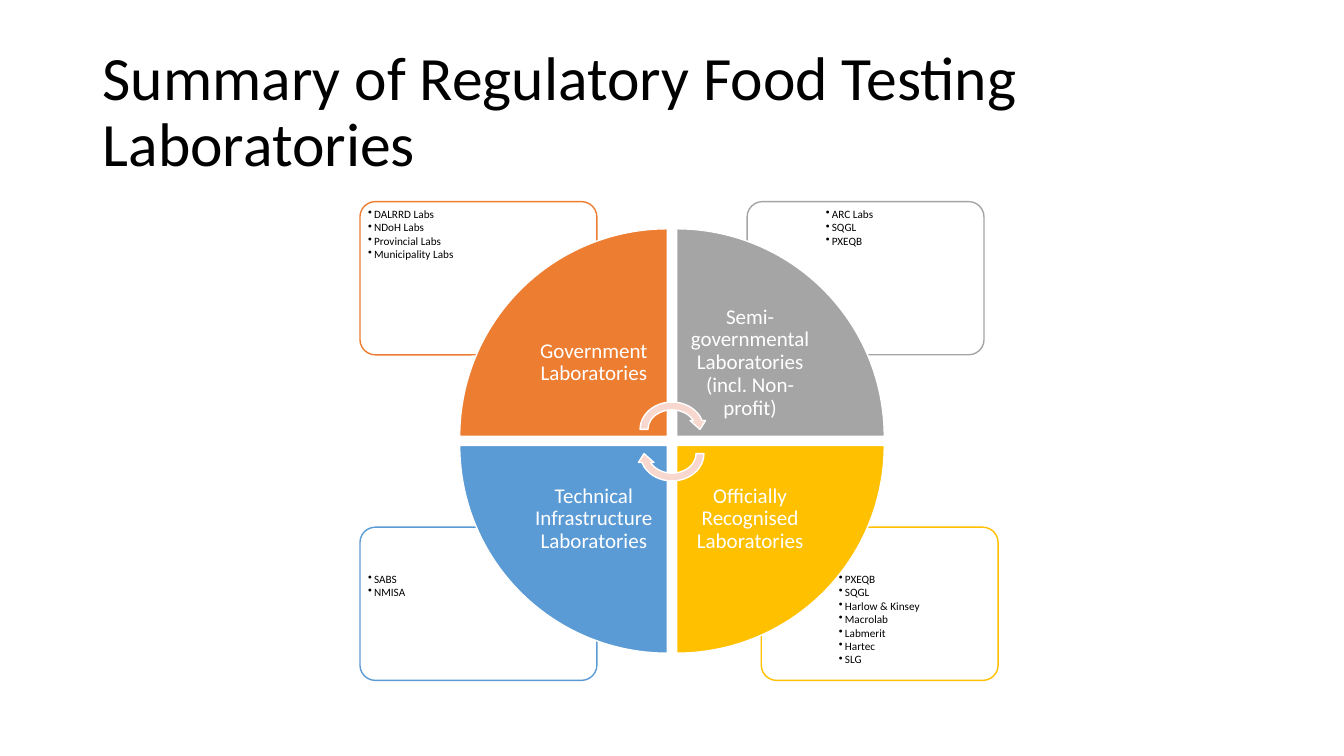
from lxml import etree
from pptx import Presentation
from pptx import util as u
from pptx.dml.color import RGBColor
from pptx.enum import shapes, text
from pptx.oxml.ns import qn

WHITE = RGBColor(0xFF, 0xFF, 0xFF)
BLACK = RGBColor(0, 0, 0)
ORANGE = RGBColor(0xED, 0x7D, 0x31)
GRAY = RGBColor(0xA5, 0xA5, 0xA5)
GOLD = RGBColor(0xFF, 0xC0, 0x00)
BLUE = RGBColor(0x5B, 0x9B, 0xD5)
PINK = RGBColor(0xF8, 0xD7, 0xCE)

WEDGE = 2.06
LABEL = 1.46
COLS = (4.56, 6.71)
ROWS = (2.27, 4.42)
LABEL_COLS = (COLS[0] + WEDGE - LABEL, COLS[1])
LABEL_ROWS = (ROWS[0] + WEDGE - LABEL, ROWS[1])

# column, row, turn, colour, label
PARTS = (
    (0, 0, 0, ORANGE, "Government Laboratories"),
    (1, 0, 90, GRAY, "Semi-governmental Laboratories (incl. Non-profit)"),
    (1, 1, 180, GOLD, "Officially Recognised Laboratories"),
    (0, 1, 270, BLUE, "Technical Infrastructure Laboratories"),
)

# card left and top, list left and top, colour, names
CARDS = (
    (7.55, 5.23, 8.28, 5.65, GOLD,
     ("PXEQB", "SQGL", "Harlow & Kinsey", "Macrolab", "Labmerit",
      "Hartec", "SLG")),
    (3.57, 5.23, 3.61, 5.65, BLUE, ("SABS", "NMISA")),
    (7.41, 2, 8.15, 2.03, GRAY, ("ARC Labs", "SQGL", "PXEQB")),
    (3.57, 2, 3.61, 2.03, ORANGE,
     ("DALRRD Labs", "NDoH Labs", "Provincial Labs", "Municipality Labs")),
)


def add_shape(slide, kind, box, fill, line, turn=0):
    shape = slide.shapes.add_shape(kind, *map(u.Inches, box))
    shape.shadow.inherit = False
    shape.fill.solid()
    shape.fill.fore_color.rgb = fill
    shape.line.color.rgb = line
    shape.line.width = u.Pt(1)
    shape.rotation = turn
    return shape


def add_text(slide, box, lines, size, color, inset=None, after=0):
    """Add a wrapped text box with one paragraph for each line."""
    frame = slide.shapes.add_textbox(*map(u.Inches, box)).text_frame
    frame.word_wrap = True
    if inset is not None:
        frame.margin_left = frame.margin_right = u.Inches(inset)
        frame.margin_top = frame.margin_bottom = u.Inches(inset)
    frame.text = "\n".join(lines)
    for para in frame.paragraphs:
        para.line_spacing = 0.9
        para.space_after = u.Pt(after)
        font = para.runs[0].font
        font.name = "Calibri"
        font.size = u.Pt(size)
        font.color.rgb = color
    return frame


def add_bullet(para):
    para.level = 1
    props = para._p.get_or_add_pPr()
    props.set("marL", str(u.Inches(0.06)))
    props.set("indent", str(u.Inches(-0.06)))
    etree.SubElement(props, qn("a:buChar")).set("char", "•")


def add_card(slide, left, top, list_left, list_top, color, names):
    box = (left, top, 2.35, 1.52)
    card = add_shape(slide, shapes.MSO_SHAPE.ROUNDED_RECTANGLE, box, WHITE, color)
    card.adjustments[0] = 0.1
    tint = card.fill._xPr.find(".//" + qn("a:srgbClr"))
    etree.SubElement(tint, qn("a:alpha")).set("val", "90000")
    box = (list_left, list_top, 1.58, 1.08)
    frame = add_text(slide, box, names, 8, BLACK, 0.04, 1)
    for para in frame.paragraphs:
        add_bullet(para)


def add_part(slide, col, row, turn, color, label):
    """Add a quarter of the circle and its label near the centre."""
    box = (COLS[col], ROWS[row], WEDGE, WEDGE)
    add_shape(slide, shapes.MSO_SHAPE.PIE_WEDGE, box, color, WHITE, turn)
    box = (LABEL_COLS[col], LABEL_ROWS[row], LABEL, LABEL)
    frame = add_text(slide, box, [label], 15, WHITE, 0.12)
    frame.vertical_anchor = text.MSO_ANCHOR.MIDDLE
    frame.paragraphs[0].alignment = text.PP_ALIGN.CENTER


def main():
    deck = Presentation()
    deck.slide_width = u.Inches(13.33)
    deck.slide_height = u.Inches(7.5)
    slide = deck.slides.add_slide(deck.slide_layouts[6])

    title = add_text(slide, (0.92, 0.4, 11.5, 1.45),
                     ["Summary of Regulatory Food Testing Laboratories"], 44, BLACK)
    title.vertical_anchor = text.MSO_ANCHOR.MIDDLE

    for card in CARDS:
        add_card(slide, *card)
    for part in PARTS:
        add_part(slide, *part)
    for top, turn in ((3.95, 0), (4.19, 180)):
        add_shape(slide, shapes.MSO_SHAPE.CIRCULAR_ARROW,
                  (6.31, top, 0.71, 0.62), PINK, WHITE, turn)

    deck.save("out.pptx")


if __name__ == "__main__":
    main()
